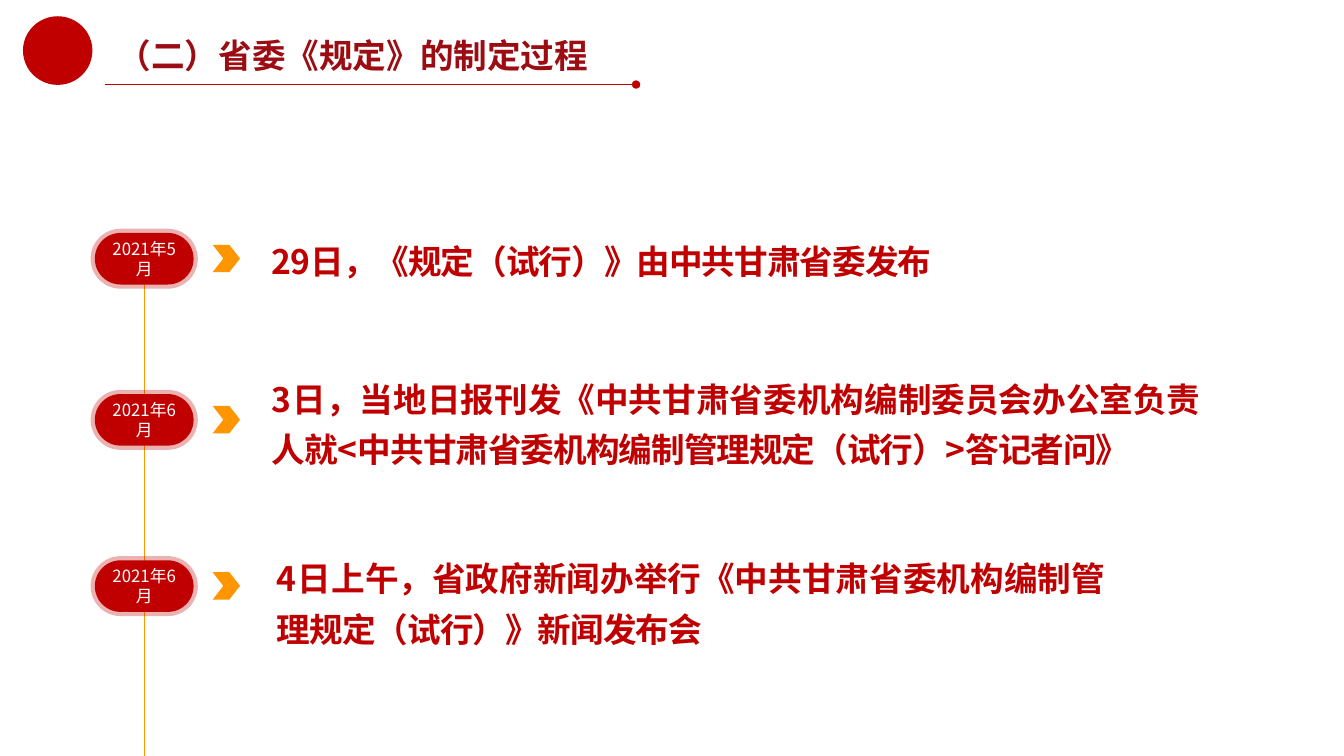
from lxml import etree
from pptx import Presentation
from pptx import util as u
from pptx.dml.color import RGBColor
from pptx.enum import shapes, text
from pptx.oxml import ns

Cm, Pt = u.Cm, u.Pt
KIND = shapes.MSO_SHAPE
HUES = {"red": "C00000", "dark": "9B0D13", "gold": "FF9500", "white": "FFFFFF"}
FACE = "Noto Sans CJK SC"

HEAD = {"font": {"size": Pt(24), "bold": True}, "para": {"line_spacing": 0.9}}
DATE = {"font": {"size": Pt(12)}, "para": {"alignment": text.PP_ALIGN.CENTER}}
BODY = {"font": {"size": Pt(24), "bold": True},
        "para": {"alignment": text.PP_ALIGN.JUSTIFY}}

STEPS = [
    (5.87, "2021年5月", (6.6, 5.79, 17.86, 1.35), 33,
     "29日，《规定（试行）》由中共甘肃省委发布"),
    (9.93, "2021年6月", (6.6, 9.17, 23.88, 2.69), 36,
     "3日，当地日报刊发《中共甘肃省委机构编制委员会办公室负责人就"
     "<中共甘肃省委机构编制管理规定（试行）>答记者问》"),
    (14.12, "2021年6月", (6.73, 13.69, 21.34, 2.82), 36,
     "4日上午，省政府新闻办举行《中共甘肃省委机构编制管理规定（试行）》新闻发布会"),
]


def hue(name):
    return RGBColor.from_string(HUES[name])


def sub(node, tag, **attrs):
    return etree.SubElement(node, ns.qn(tag), attrs)


def apply(item, form):
    for key, value in form.items():
        setattr(item, key, value)


def write(shape, words, form, color, gap=0):
    frame = shape.text_frame
    frame.word_wrap = True
    para = frame.paragraphs[0]
    apply(para, form["para"])
    run = para.add_run()
    run.text = words
    apply(run.font, form["font"])
    run.font.color.rgb = hue(color)
    run.font.name = FACE
    props = run.font._element
    sub(props, "a:ea", typeface=FACE)
    if gap:
        props.set("spc", str(gap))
    return para


def label(slide, box, words, form, color, gap=0):
    shape = slide.shapes.add_textbox(*map(Cm, box))
    return write(shape, words, form, color, gap)


def solid(slide, kind, box, color, bend=None):
    shape = slide.shapes.add_shape(kind, *map(Cm, box))
    shape.shadow.inherit = False
    shape.fill.solid()
    shape.fill.fore_color.rgb = hue(color)
    shape.line.fill.background()
    if bend is not None:
        shape.adjustments[0] = bend
    return shape


def rule(slide, ends, color, width):
    line = slide.shapes.add_connector(shapes.MSO_CONNECTOR.STRAIGHT, *map(Cm, ends))
    line.line.color.rgb = hue(color)
    line.line.width = Pt(width)
    sub(line._element.spPr, "a:effectLst")
    return line


def pill(slide, top, words):
    shape = solid(slide, KIND.ROUNDED_RECTANGLE, (2.39, top, 2.49, 1.3), "red", 0.5)
    shape.line.color.rgb = hue("red")
    shape.line.width = Pt(6)
    tint = shape.line._ln.find(".//" + ns.qn("a:srgbClr"))
    sub(tint, "a:alpha", val="30000")
    write(shape, words, DATE, "white")


def step(slide, top, date, box, pitch, words):
    para = label(slide, box, words, BODY, "red", -70)
    para.line_spacing = Pt(pitch)
    pill(slide, top, date)
    solid(slide, KIND.CHEVRON, (5.36, top + 0.3, 0.69, 0.69), "gold", 0.39)


def header(slide):
    line = rule(slide, (2.64, 2.13, 16.03, 2.13), "red", 0.75)
    sub(line.line._ln, "a:tailEnd", type="oval")
    solid(slide, KIND.OVAL, (0.58, 0.41, 1.75, 1.73), "red")
    label(slide, (2.72, 0.86, 13, 1.52), "（二）省委《规定》的制定过程", HEAD, "dark")


def main():
    deck = Presentation()
    deck.slide_width, deck.slide_height = Cm(33.87), Cm(19.05)
    slide = deck.slides.add_slide(deck.slide_layouts[6])
    header(slide)
    rule(slide, (3.63, 7.16, 3.63, 19.05), "gold", 0.5)
    for item in STEPS:
        step(slide, *item)
    deck.save("out.pptx")


if __name__ == "__main__":
    main()
